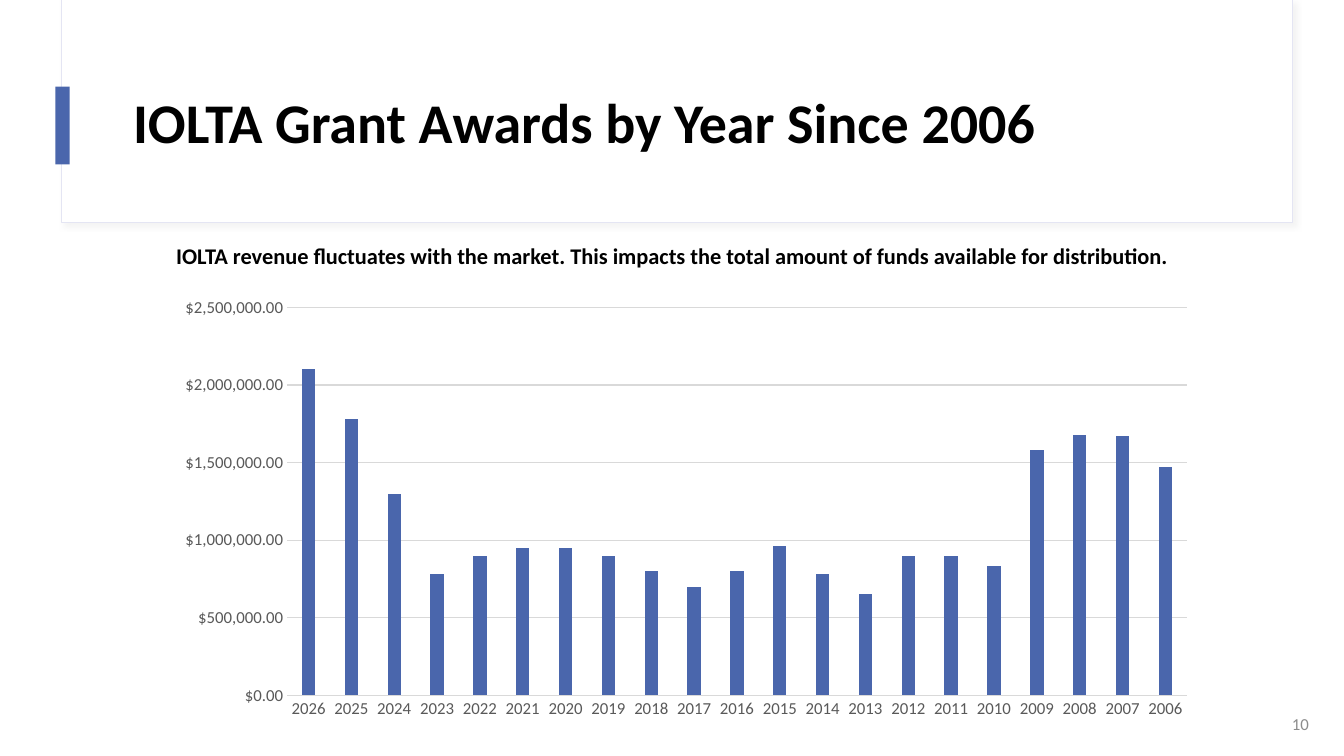
from dataclasses import dataclass

from lxml.etree import SubElement
from pptx import Presentation
from pptx.chart.chart import Chart
from pptx.chart.data import CategoryChartData
from pptx.dml.color import RGBColor
from pptx.enum.chart import XL_CHART_TYPE, XL_TICK_MARK
from pptx.enum.shapes import MSO_SHAPE
from pptx.enum.text import MSO_ANCHOR, PP_ALIGN
from pptx.oxml import parse_xml
from pptx.oxml.ns import nsdecls, qn
from pptx.shapes.autoshape import Shape
from pptx.slide import Slide
from pptx.text.text import Font
from pptx.util import Inches, Pt

WIDTH, HEIGHT = Inches(13.33), Inches(7.5)


@dataclass(frozen=True)
class Theme:
    font: str = "Calibri"
    white: str = "FFFFFF"
    black: str = "000000"
    blue: str = "4A66AC"
    frame: str = "E4E5F3"
    grid: str = "D9D9D9"
    label: str = "595959"
    muted: str = "8C8C8C"
    title: int = 40
    note: int = 16
    small: int = 12
    line: float = 0.75


@dataclass(frozen=True)
class Box:
    """Percentages of the slide's width and height."""

    left: float
    top: float
    width: float
    height: float

    def place(self) -> tuple[int, int, int, int]:
        return (
            int(WIDTH * self.left / 100),
            int(HEIGHT * self.top / 100),
            int(WIDTH * self.width / 100),
            int(HEIGHT * self.height / 100),
        )


@dataclass(frozen=True)
class Panel:
    box: Box
    fill: str
    line: str = ""
    shadow: bool = False


@dataclass(frozen=True)
class Label:
    box: Box
    text: str
    size: int
    color: str
    bold: bool
    align: PP_ALIGN
    anchor: MSO_ANCHOR
    space: float = 1.0
    before: int = 0


THEME = Theme()
PANELS = (
    Panel(Box(4.58, 0, 91.6, 29.47), THEME.white, THEME.frame, True),
    Panel(Box(4.13, 11.47, 1.05, 10.27), THEME.blue),
)
TITLE = Label(
    Box(9.15, 8, 83.42, 17.2), "IOLTA Grant Awards by Year Since 2006",
    THEME.title, THEME.black, True, PP_ALIGN.LEFT, MSO_ANCHOR.MIDDLE, 0.9,
)
LABELS = (
    Label(
        Box(4.35, 29.47, 91.37, 6.8),
        "IOLTA revenue fluctuates with the market. "
        "This impacts the total amount of funds available for distribution.",
        THEME.note, THEME.black, True, PP_ALIGN.CENTER, MSO_ANCHOR.BOTTOM, 1.1, 10,
    ),
    Label(
        Box(75.62, 93.07, 22.51, 5.33), "10",
        THEME.small, THEME.muted, False, PP_ALIGN.RIGHT, MSO_ANCHOR.MIDDLE,
    ),
)
CHART = Box(6.08, 38.4, 87.85, 60)
PLOT = {"x": 0.174, "y": 0.038, "w": 0.762, "h": 0.855}
YEARS = range(2026, 2005, -1)
AWARDS = (
    2100000, 1780000, 1300000, 780000, 900000, 950000, 950000,
    900000, 800000, 700000, 800000, 960000, 780000, 650000,
    900000, 900000, 830000, 1580000, 1680000, 1670000, 1470000,
)


def rgb(color: str) -> RGBColor:
    return RGBColor.from_string(color)


def style(font: Font, size: int, color: str, bold: bool = False) -> None:
    font.name = THEME.font
    font.size = Pt(size)
    font.bold = bold
    font.color.rgb = rgb(color)


def cast(shape: Shape) -> None:
    shape._element.spPr.append(parse_xml(
        f'<a:effectLst {nsdecls("a")}>'
        f'<a:outerShdw blurRad="{Pt(4)}" dist="{Pt(3)}" dir="2700000" '
        'algn="tl" rotWithShape="0">'
        f'<a:srgbClr val="{THEME.grid}"><a:alpha val="30000"/></a:srgbClr>'
        '</a:outerShdw></a:effectLst>'
    ))


def draw(slide: Slide, panel: Panel) -> None:
    shape = slide.shapes.add_shape(MSO_SHAPE.RECTANGLE, *panel.box.place())
    shape.fill.solid()
    shape.fill.fore_color.rgb = rgb(panel.fill)
    if panel.line:
        shape.line.color.rgb = rgb(panel.line)
        shape.line.width = Pt(THEME.line)
    else:
        shape.line.fill.background()
    if panel.shadow:
        cast(shape)
    else:
        shape.shadow.inherit = False


def write(shape: Shape, label: Label) -> None:
    shape.left, shape.top, shape.width, shape.height = label.box.place()
    frame = shape.text_frame
    frame.text = label.text
    frame.word_wrap = True
    frame.vertical_anchor = label.anchor
    part = frame.paragraphs[0]
    part.alignment = label.align
    part.line_spacing = label.space
    part.space_before = Pt(label.before)
    style(part.runs[0].font, label.size, label.color, label.bold)


def fit(chart: Chart) -> None:
    area = chart._chartSpace.chart.plotArea
    for old in area.findall(qn("c:layout")):
        area.remove(old)
    layout = parse_xml(f'<c:layout {nsdecls("c")}><c:manualLayout/></c:layout>')
    modes = {"layoutTarget": "inner", "xMode": "edge", "yMode": "edge"}
    for name, value in (modes | PLOT).items():
        SubElement(layout[0], qn(f"c:{name}")).set("val", str(value))
    area.insert(0, layout)


def plot(slide: Slide) -> None:
    data = CategoryChartData(number_format='"$"#,##0.00')
    data.categories = [str(year) for year in YEARS]
    data.add_series("Series 1", AWARDS)
    chart = slide.shapes.add_chart(
        XL_CHART_TYPE.COLUMN_CLUSTERED, *CHART.place(), data
    ).chart
    chart.has_legend = chart.has_title = False
    style(chart.font, THEME.small, THEME.label)
    bars = chart.plots[0]
    bars.vary_by_categories = False
    bars.gap_width, bars.overlap = 219, -27
    fill = bars.series[0].format.fill
    fill.solid()
    fill.fore_color.rgb = rgb(THEME.blue)
    years, money = chart.category_axis, chart.value_axis
    for axis in (years, money):
        axis.major_tick_mark = axis.minor_tick_mark = XL_TICK_MARK.NONE
        style(axis.tick_labels.font, THEME.small, THEME.label)
    money.minimum_scale, money.maximum_scale, money.major_unit = 0, 2500000, 500000
    money.tick_labels.number_format = '"$"#,##0.00'
    money.tick_labels.number_format_is_linked = False
    money.format.line.fill.background()
    for line in (years.format.line, money.major_gridlines.format.line):
        line.color.rgb = rgb(THEME.grid)
        line.width = Pt(THEME.line)
    fit(chart)


def main() -> None:
    deck = Presentation()
    deck.slide_width, deck.slide_height = WIDTH, HEIGHT
    slide = deck.slides.add_slide(deck.slide_layouts.get_by_name("Title Only"))
    for panel in PANELS:
        draw(slide, panel)
    title = slide.shapes.title
    title.element.getparent().append(title.element)
    write(title, TITLE)
    for label in LABELS:
        write(slide.shapes.add_textbox(*label.box.place()), label)
    plot(slide)
    deck.save("out.pptx")


if __name__ == "__main__":
    main()
